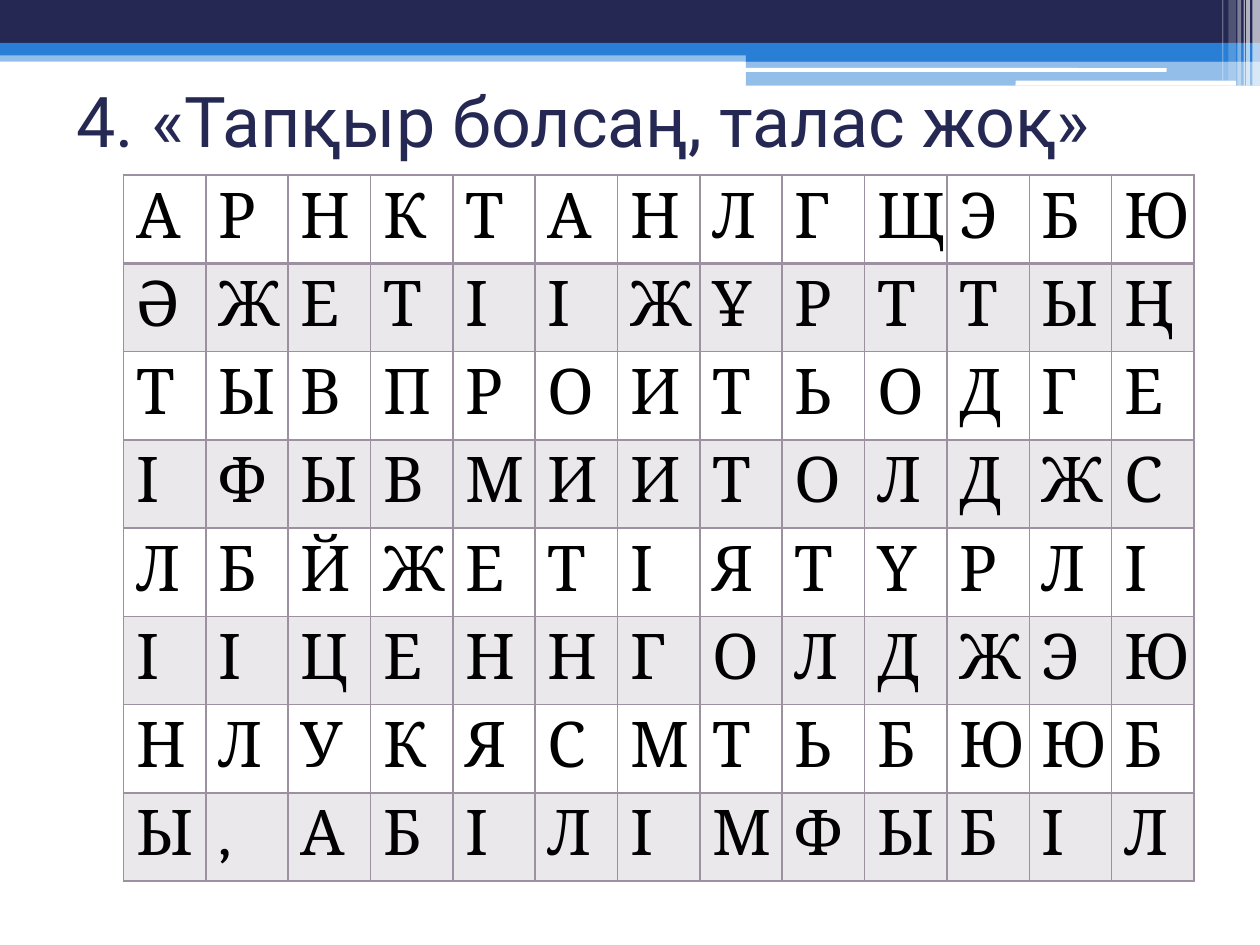
from dataclasses import dataclass

from lxml import etree
from pptx import Presentation
from pptx.dml.color import RGBColor
from pptx.enum.shapes import MSO_SHAPE
from pptx.enum.text import MSO_ANCHOR
from pptx.oxml.ns import qn
from pptx.util import Inches, Pt

RECT = MSO_SHAPE.RECTANGLE
ROUND = MSO_SHAPE.ROUNDED_RECTANGLE
MIDDLE = MSO_ANCHOR.MIDDLE

COLORS = {
    "navy": "242852",
    "blue": "297FD5",
    "white": "FFFFFF",
    "mauve": "9D90A0",
    "black": "000000",
}
WIDTH, HEIGHT = Inches(10), Inches(7.5)
TITLE = "4. «Тапқыр болсаң, талас жоқ»"
TITLE_FORMAT = {"size": Pt(40), "name": "Roboto"}
LETTER_FORMAT = {"size": Pt(36), "name": "Cambria"}
LETTERS = [
    "АРНКТАНЛГЩЭБЮ",
    "ӘЖЕТІІЖҰРТТЫҢ",
    "ТЫВПРОИТЬОДГЕ",
    "ІФЫВМИИТОЛДЖС",
    "ЛБЙЖЕТІЯТҮРЛІ",
    "ІІЦЕННГОЛДЖЭЮ",
    "НЛУКЯСМТЬБЮЮБ",
    "Ы,АБІЛІМФЫБІЛ",
]


@dataclass
class Box:
    x: float
    y: float
    w: float
    h: float

    def emu(self) -> tuple:
        return (
            int(WIDTH * self.x / 100),
            int(HEIGHT * self.y / 100),
            int(WIDTH * self.w / 100),
            int(HEIGHT * self.h / 100),
        )


@dataclass
class Band:
    box: Box
    color: str
    alpha: int = 100
    kind: int = RECT


@dataclass
class Stripe:
    x: float
    w: float
    h: float
    alpha: int


BANDS = [
    Band(Box(0, 5.33, 100, 1.2), "blue", 50),
    Band(Box(0, 0, 100, 4.53), "navy"),
    Band(Box(0, 4.53, 100, 1.33), "blue"),
    Band(Box(59.2, 5.2, 40.8, 1.33), "blue"),
    Band(Box(59.2, 6.4, 40.8, 2.67), "blue", 50),
    Band(Box(59.1, 7.2, 33.5, 0.4), "white", kind=ROUND),
    Band(Box(80.6, 8.53, 17.5, 0.53), "white", kind=ROUND),
]
STRIPES = [
    Stripe(99.4, 0.6, 9.07, 65),
    Stripe(98.9, 0.3, 9.07, 65),
    Stripe(98.7, 0.1, 9.07, 60),
    Stripe(98.2, 0.3, 9.07, 40),
    Stripe(97.5, 0.6, 8.53, 20),
    Stripe(97, 0.1, 8.53, 30),
]
TITLE_BOX = Box(5.1, 4.8, 90, 15.6)
GRID_BOX = Box(9.8, 18.53, 85, 72)


def paint(fill, color: str, alpha: int = 100) -> None:
    fill.solid()
    fill.fore_color.rgb = RGBColor.from_string(COLORS[color])
    if alpha < 100:
        clr = fill._xPr.find(qn("a:solidFill"))[0]
        etree.SubElement(clr, qn("a:alpha"), val=str(alpha * 1000))


def draw_band(slide, band: Band) -> None:
    sp = slide.shapes.add_shape(band.kind, *band.box.emu())
    sp.shadow.inherit = False
    sp.line.fill.background()
    paint(sp.fill, band.color, band.alpha)


def write(tf, text: str, fmt: dict, color: str) -> None:
    r = tf.paragraphs[0].add_run()
    r.text = text
    for key, value in fmt.items():
        setattr(r.font, key, value)
    r.font.color.rgb = RGBColor.from_string(COLORS[color])


def draw_title(slide) -> None:
    tf = slide.shapes.add_textbox(*TITLE_BOX.emu()).text_frame
    tf.word_wrap = True
    tf.vertical_anchor = MIDDLE
    write(tf, TITLE, TITLE_FORMAT, "navy")


def set_borders(cell, widths: dict) -> None:
    tc_pr = cell._tc.get_or_add_tcPr()
    for i, (side, width) in enumerate(widths.items()):
        ln = etree.Element(qn(f"a:{side}"), w=str(Pt(width)))
        fill = etree.SubElement(ln, qn("a:solidFill"))
        etree.SubElement(fill, qn("a:srgbClr"), val=COLORS["mauve"])
        tc_pr.insert(i, ln)


def draw_grid(slide) -> None:
    rows, cols = len(LETTERS), len(LETTERS[0])
    frame = slide.shapes.add_table(rows, cols, *GRID_BOX.emu())
    for i, line in enumerate(LETTERS):
        for j, letter in enumerate(line):
            cell = frame.table.cell(i, j)
            write(cell.text_frame, letter, LETTER_FORMAT, "black")
            if i % 2:
                paint(cell.fill, "mauve", 20)
            else:
                cell.fill.background()
            top, bottom = (2 if i == 1 else 1), (2 if i == 0 else 1)
            set_borders(cell, {"lnL": 1, "lnR": 1, "lnT": top, "lnB": bottom})


def main() -> None:
    prs = Presentation()
    prs.slide_width, prs.slide_height = WIDTH, HEIGHT
    slide = prs.slides.add_slide(prs.slide_layouts[6])
    for band in BANDS:
        draw_band(slide, band)
    for s in STRIPES:
        draw_band(slide, Band(Box(s.x, 0, s.w, s.h), "white", s.alpha))
    draw_title(slide)
    draw_grid(slide)
    prs.save("out.pptx")


if __name__ == "__main__":
    main()
